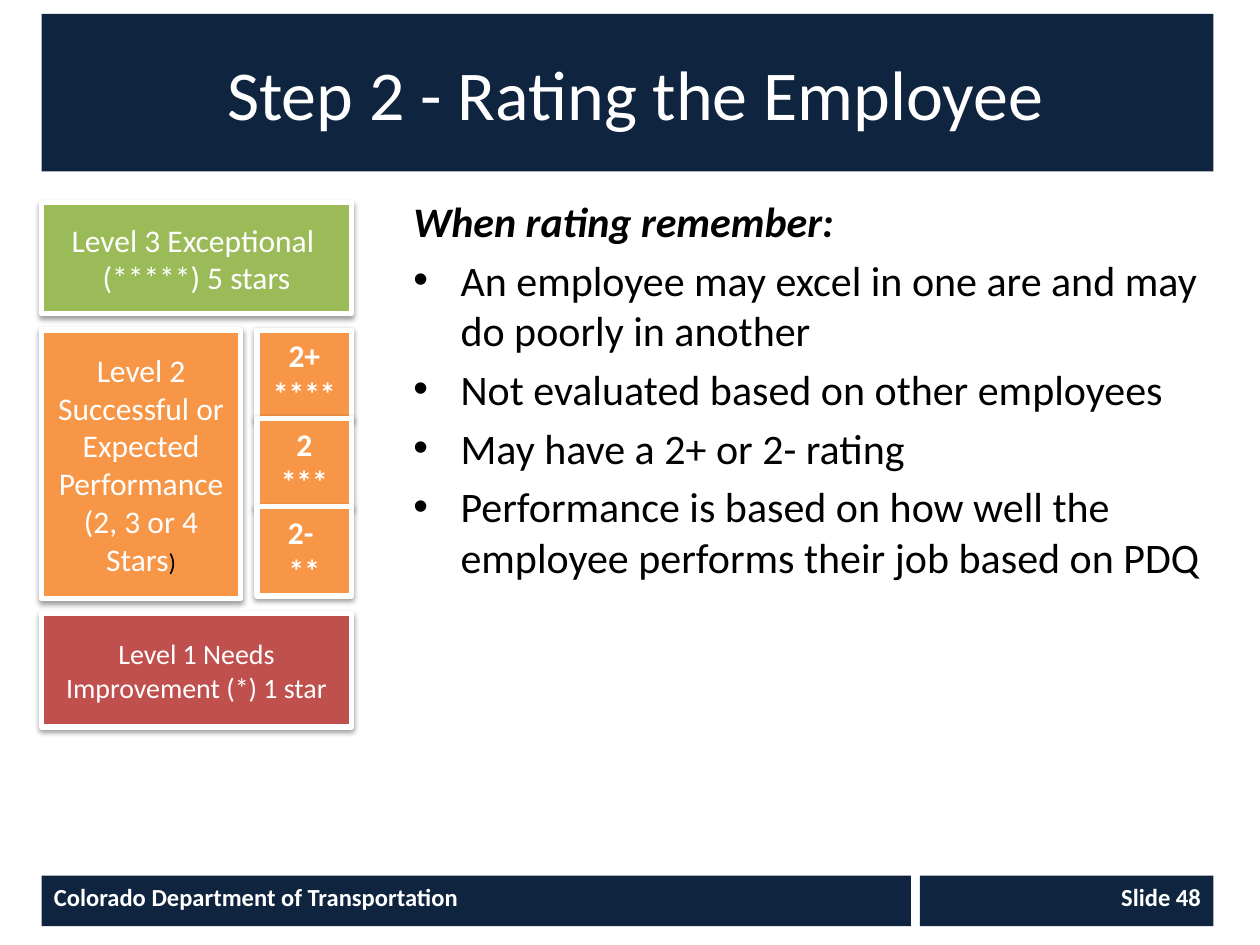
from lxml import etree
from pptx import Presentation
from pptx import util as u
from pptx.dml.color import RGBColor
from pptx.enum import shapes, text
from pptx.oxml import parse_xml
from pptx.oxml.ns import nsdecls, qn

NAVY, WHITE, BLACK = "0F243E", "FFFFFF", "000000"
GREEN, ORANGE, RED = "9BBB59", "F79646", "C0504D"
LEFT, RIGHT = 0.33, 9.63
SHADOW = (
    f'<a:effectLst {nsdecls("a")}>'
    '<a:outerShdw blurRad="40000" dist="20000" dir="5400000" rotWithShape="0">'
    '<a:srgbClr val="000000"><a:alpha val="38000"/></a:srgbClr>'
    '</a:outerShdw></a:effectLst>'
)


def paint(target, color):
    target.solid()
    target.fore_color.rgb = RGBColor.from_string(color)


def style(para, size, color, bold=False, align=None):
    para.font.name = "Calibri"
    para.font.size = u.Pt(size)
    para.font.bold = bold
    para.font.color.rgb = RGBColor.from_string(color)
    if align is not None:
        para.alignment = align


def place(shape, box):
    shape.left, shape.top, shape.width, shape.height = map(u.Inches, box)


def add_panel(page, box, color, lines, size, bold=False,
              align=text.PP_ALIGN.CENTER, anchor=text.MSO_ANCHOR.MIDDLE):
    panel = page.shapes.add_shape(shapes.MSO_SHAPE.RECTANGLE, *map(u.Inches, box))
    panel.shadow.inherit = False
    paint(panel.fill, color)
    panel.line.fill.background()
    frame = panel.text_frame
    frame.word_wrap = True
    frame.vertical_anchor = anchor
    frame.text = "\n".join(lines)
    for para in frame.paragraphs:
        style(para, size, WHITE, bold, align)
    return panel


def add_level(page, box, color, lines, size=18, **options):
    level = add_panel(page, box, color, lines, size, **options)
    paint(level.line.fill, WHITE)
    level.line.width = u.Pt(3)
    properties = level._element.spPr
    properties.remove(properties.find(qn("a:effectLst")))
    properties.append(parse_xml(SHADOW))
    return level


def fill_title(page, box):
    title = page.shapes.title
    place(title, box)
    paint(title.fill, NAVY)
    title.text_frame.text = " Step 2 - Rating the Employee"
    title.text_frame.vertical_anchor = text.MSO_ANCHOR.MIDDLE
    style(title.text_frame.paragraphs[0], 40, WHITE, align=text.PP_ALIGN.CENTER)


def fill_reminders(page, box):
    body = page.placeholders[1]
    place(body, box)
    frame = body.text_frame
    frame.text = "\n".join([
        "When rating remember:",
        "An employee may excel in one are and may do poorly in another",
        "Not evaluated based on other employees",
        "May have a 2+ or 2- rating",
        "Performance is based on how well the employee performs their job based on PDQ",
    ])
    for para in frame.paragraphs:
        style(para, 24, BLACK)
    heading = frame.paragraphs[0]
    heading.font.bold = heading.font.italic = True
    properties = heading._p.get_or_add_pPr()
    properties.set("marL", "0")
    properties.set("indent", "0")
    properties.insert(0, etree.Element(qn("a:buNone")))


def add_ratings(page, box):
    left, top, width, height = box
    add_level(page, (left, top, width, 0.88), GREEN,
              ["Level 3 Exceptional ", "(*****) 5 stars"])
    middle = top + 1.01
    successful = add_level(page, (left, middle, 1.58, 2.13), ORANGE,
                           ["Level 2 Successful or Expected Performance",
                            "(2, 3 or 4 Stars"])
    bracket = successful.text_frame.paragraphs[1].add_run()
    bracket.text = ")"
    bracket.font.size = u.Pt(14)
    bracket.font.color.rgb = RGBColor.from_string(BLACK)
    add_level(page, (left, top + height - 0.9, width, 0.9), RED,
              ["Level 1 Needs Improvement (*) 1 star"], 16)
    for row, lines in enumerate([["2+ ****"], ["2 ***"], ["2- ", "**"]]):
        grade = add_level(page, (left + width - 0.75, middle + row * 0.7, 0.75, 0.71),
                          ORANGE, lines, bold=True, anchor=text.MSO_ANCHOR.TOP)
        grade.text_frame.auto_size = text.MSO_AUTO_SIZE.SHAPE_TO_FIT_TEXT


def add_footer(page, box):
    left, top, width, height = box
    number_width, gap = 2.33, 0.07
    owner_width = width - number_width - gap
    for x, part_width, label, align in [
        (left + owner_width + gap, number_width, "Slide 48", text.PP_ALIGN.RIGHT),
        (left, owner_width, "Colorado Department of Transportation", text.PP_ALIGN.LEFT),
    ]:
        add_panel(page, (x, top, part_width, height), NAVY, [label], 14, True,
                  align, text.MSO_ANCHOR.TOP)


def main():
    deck = Presentation()
    deck.slide_width, deck.slide_height = u.Inches(10), u.Inches(7.5)
    page = deck.slides.add_slide(deck.slide_layouts[1])
    fill_title(page, (LEFT, 0.11, RIGHT - LEFT, 1.25))
    fill_reminders(page, (3.18, 1.5, 6.45, 5.4))
    add_footer(page, (LEFT, 6.95, RIGHT - LEFT, 0.4))
    add_ratings(page, (LEFT, 1.61, 2.46, 4.16))
    deck.save("out.pptx")


if __name__ == "__main__":
    main()
